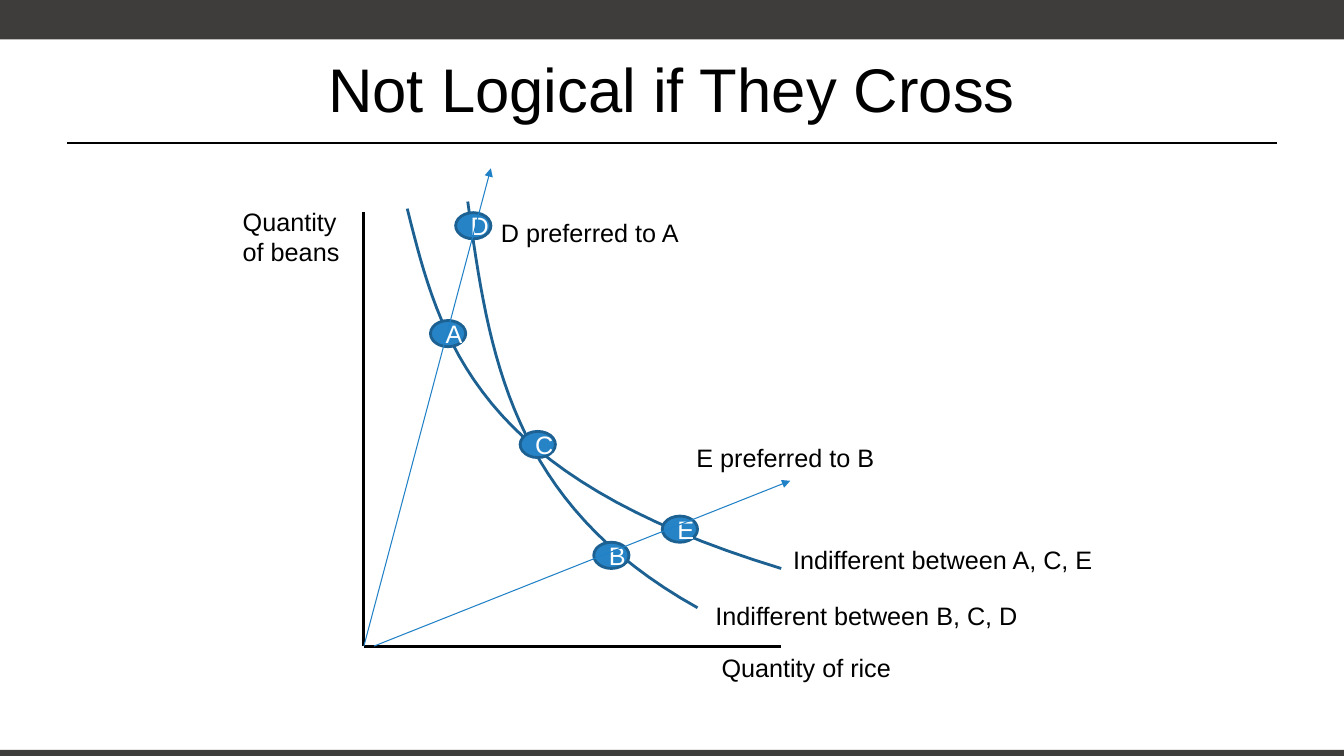
"""Build the slide on indifference curves that cross."""
from pptx import Presentation
from pptx.dml.color import RGBColor
from pptx.enum.shapes import MSO_CONNECTOR, MSO_SHAPE
from pptx.enum.text import MSO_ANCHOR, PP_ALIGN
from pptx.oxml.ns import qn
from pptx.util import Inches, Pt
from lxml.etree import SubElement

BLACK = RGBColor(0, 0, 0)
WHITE = RGBColor(255, 255, 255)
GREY = RGBColor(0x3E, 0x3D, 0x3C)
BLUE = RGBColor(0x26, 0x83, 0xC6)
NAVY = RGBColor(0x1C, 0x61, 0x92)
RAY = RGBColor(0x21, 0x81, 0xC6)

CELL = Inches(0.1)
WIDE, HIGH = 133.33, 75
STEPS = 32

deck = Presentation()
deck.slide_width = round(WIDE * CELL)
deck.slide_height = HIGH * CELL
slide = deck.slides.add_slide(deck.slide_layouts[6])
shapes = slide.shapes


def link(start, end, color, width, arrow=False):
    ends = [round(n * CELL) for n in (*start, *end)]
    line = shapes.add_connector(MSO_CONNECTOR.STRAIGHT, *ends)
    line.line.color.rgb = color
    line.line.width = Pt(width)
    if arrow:
        SubElement(line.line._get_or_add_ln(), qn("a:tailEnd"), type="triangle")
    SubElement(line._element.spPr, qn("a:effectLst"))


def write(text, box, size=18):
    frame = shapes.add_textbox(*[round(n * CELL) for n in box]).text_frame
    frame.word_wrap = True
    frame.text = text
    para = frame.paragraphs[0]
    para.font.name = "Arial"
    para.font.size = Pt(size)
    para.font.color.rgb = BLACK
    return frame


for top, height in ((0, 3.9), (74.4, 1)):
    bar = shapes.add_shape(MSO_SHAPE.RECTANGLE, 0, round(top * CELL),
                           deck.slide_width, round(height * CELL))
    bar.shadow.inherit = False
    bar.fill.solid()
    bar.fill.fore_color.rgb = GREY
    bar.line.fill.background()

link((6.67, 14.2), (126.67, 14.2), BLACK, 1.25)
title = write("Not Logical if They Cross", (6.67, 2.5, 120, 12.5), 44)
title.vertical_anchor = MSO_ANCHOR.MIDDLE
title.paragraphs[0].alignment = PP_ALIGN.CENTER

origin = (36.1, 64.1)
for end in ((36.1, 21), (77.5, 64.1)):
    link(origin, end, BLACK, 2)

curves = [
    ((40.4, 20.7), (43.7, 33.9), (47.1, 47.2), (77.5, 56.4)),
    ((46.4, 20), (48.5, 35), (50.5, 49.9), (69.2, 60.3)),
]
for knots in curves:
    points = []
    for step in range(STEPS + 1):
        t = step / STEPS
        parts = ((1 - t) ** 3, 3 * t * (1 - t) ** 2, 3 * t * t * (1 - t), t ** 3)
        points.append([round(CELL * sum(p * k[axis] for p, k in zip(parts, knots)))
                       for axis in (0, 1)])
    pen = shapes.build_freeform(*points[0])
    pen.add_line_segments(points[1:], close=False)
    curve = pen.convert_to_shape()
    curve.shadow.inherit = False
    curve.fill.background()
    curve.line.color.rgb = NAVY
    curve.line.width = Pt(2)

dots = {"A": (42.7, 31.8), "B": (58.9, 53.8), "C": (51.6, 42.8),
        "D": (45.2, 21.1), "E": (65.7, 51.2)}
for name, (left, top) in dots.items():
    box = [round(n * CELL) for n in (left, top, 3.5, 2.6)]
    dot = shapes.add_shape(MSO_SHAPE.OVAL, *box)
    dot.shadow.inherit = False
    dot.fill.solid()
    dot.fill.fore_color.rgb = BLUE
    dot.line.color.rgb = NAVY
    dot.line.width = Pt(2)
    dot.text_frame.text = name
    dot.text_frame.vertical_anchor = MSO_ANCHOR.MIDDLE
    para = dot.text_frame.paragraphs[0]
    para.alignment = PP_ALIGN.CENTER
    para.font.name = "Arial"
    para.font.size = Pt(18)
    para.font.color.rgb = WHITE

link(origin, (48.7, 16.7), RAY, 0.75, arrow=True)
link((37.1, 64.1), (78.4, 47.7), RAY, 0.75, arrow=True)

write("D preferred to A", (48.7, 21.1, 20.5, 4.2))
write("E preferred to B", (68.1, 43.4, 20.2, 4.2))
write("Indifferent between B, C, D", (70, 59.1, 33, 4.2))
write("Indifferent between A, C, E", (77.7, 53.5, 33, 4.2))
write("Quantity of rice", (70.6, 64.2, 21.6, 4.2))
write("Quantity of beans", (23.1, 20, 12.6, 7.3))

deck.save("out.pptx")
